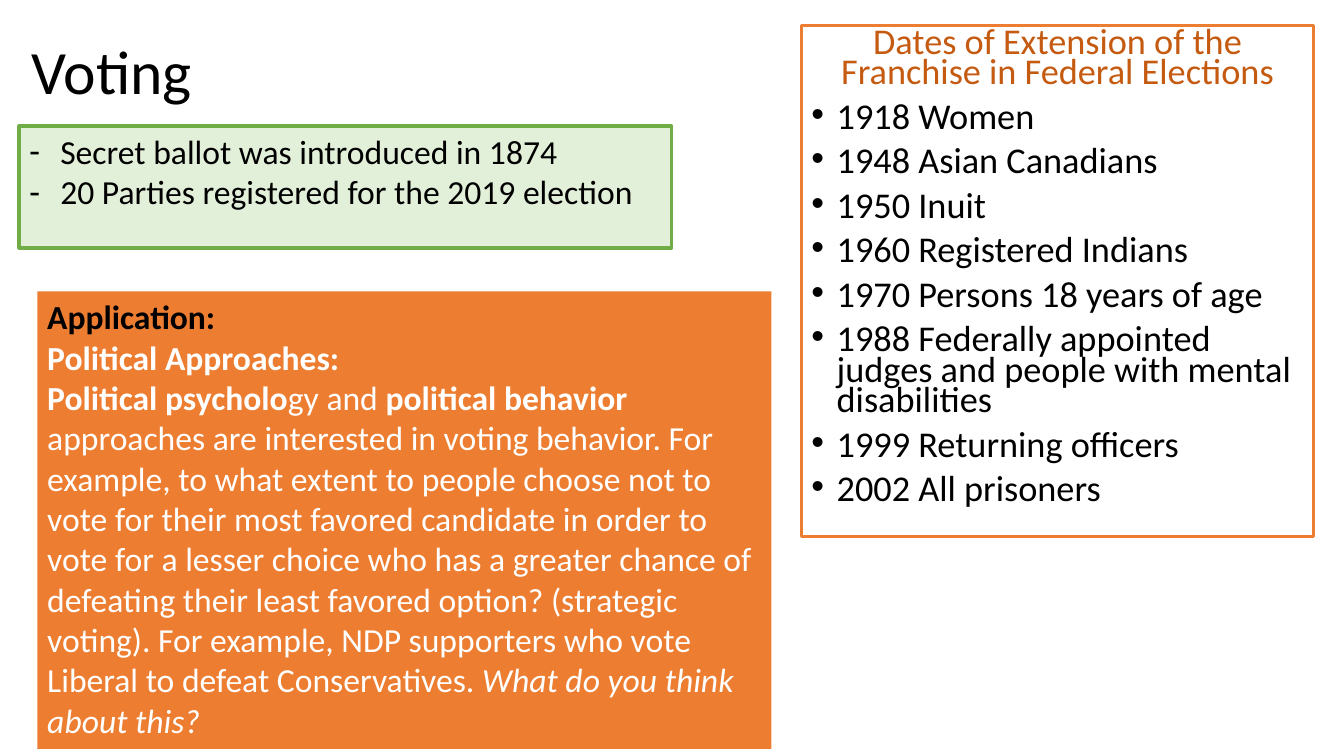
from dataclasses import dataclass

from lxml import etree
from pptx import Presentation
from pptx.dml.color import RGBColor
from pptx.enum.text import MSO_ANCHOR, MSO_AUTO_SIZE, PP_ALIGN
from pptx.oxml.ns import qn
from pptx.util import Inches, Pt

TOP, MIDDLE = MSO_ANCHOR.TOP, MSO_ANCHOR.MIDDLE
LEFT, CENTER = PP_ALIGN.LEFT, PP_ALIGN.CENTER
NO_AUTOFIT = MSO_AUTO_SIZE.NONE


@dataclass(frozen=True)
class Theme:
    font: str = "Calibri"
    black: str = "000000"
    white: str = "FFFFFF"
    orange: str = "ED7D31"
    rust: str = "C55A11"
    green: str = "70AD47"
    pale_green: str = "E2F0D9"
    title_size: float = 44
    body_size: float = 24
    dates_size: float = 25.9


THEME = Theme()

TITLE = "Voting"
DATES_HEADING = "Dates of Extension of the Franchise in Federal Elections"
DATES = [
    "1918 Women",
    "1948 Asian Canadians",
    "1950 Inuit",
    "1960 Registered Indians",
    "1970 Persons 18 years of age",
    "1988 Federally appointed judges and people with mental disabilities",
    "1999 Returning officers",
    "2002 All prisoners",
]
BALLOT_FACTS = [
    "Secret ballot was introduced in 1874",
    "20 Parties registered for the 2019 election",
]
APPLICATION_HEADING = "Application:"
APPROACHES_HEADING = "Political Approaches:"
APPROACHES = [
    ("Political psycholo", {"bold": True}),
    ("gy and ", {}),
    ("political behavior ", {"bold": True}),
    (
        "approaches are interested in voting behavior. For example, to what extent "
        "to people choose not to vote for their most favored candidate in order to "
        "vote for a lesser choice who has a greater chance of defeating their least "
        "favored option? (strategic voting). For example, NDP supporters who vote "
        "Liberal to defeat Conservatives. ",
        {},
    ),
    ("What do you think about this?", {"italic": True}),
]

TITLE_AREA = (0.21, 0.01, 2.52, 1.45)
DATES_AREA = (7.95, 0.25, 5.08, 5.07)
FACTS_AREA = (0.19, 1.25, 6.47, 1.21)
APPLICATION_AREA = (0.37, 2.89, 7.28, 4.54)


def color(code):
    return RGBColor.from_string(code)


def add_text(frame, text, *, size=THEME.body_size, ink=THEME.black, bold=False,
             align=LEFT, bullet=None, indent=0, line_spacing=1.0, space_before=0):
    spans = [(text, {"bold": bold})] if isinstance(text, str) else text
    first = frame.paragraphs[0]
    para = frame.add_paragraph() if first.runs else first
    para.alignment = align
    para.line_spacing = line_spacing
    para.space_before = Pt(space_before)
    if bullet:
        properties = para._p.get_or_add_pPr()
        properties.set("marL", str(Inches(indent)))
        properties.set("indent", str(-Inches(indent)))
        etree.SubElement(properties, qn("a:buFont"), typeface="Arial")
        etree.SubElement(properties, qn("a:buChar"), char=bullet)
    for words, style in spans:
        span = para.add_run()
        span.text = words
        span.font.name = THEME.font
        span.font.size = Pt(size)
        span.font.color.rgb = color(ink)
        span.font.bold = style.get("bold", False)
        span.font.italic = style.get("italic", False)


def prepare_frame(shape, anchor=TOP):
    frame = shape.text_frame
    frame.word_wrap = True
    frame.auto_size = NO_AUTOFIT
    frame.vertical_anchor = anchor
    return frame


def add_box(page, area, *, fill=None, line=None, line_width=0):
    box = page.shapes.add_textbox(*map(Inches, area))
    if fill:
        box.fill.solid()
        box.fill.fore_color.rgb = color(fill)
    if line:
        box.line.color.rgb = color(line)
        box.line.width = Pt(line_width)
    return prepare_frame(box)


def add_title(page):
    title = page.shapes.title
    title.left, title.top, title.width, title.height = map(Inches, TITLE_AREA)
    add_text(prepare_frame(title, MIDDLE), TITLE, size=THEME.title_size, line_spacing=0.9)


def add_dates(page):
    frame = add_box(page, DATES_AREA, line=THEME.orange, line_width=2.25)
    layout = {"size": THEME.dates_size, "line_spacing": 0.7, "space_before": 10}
    add_text(frame, DATES_HEADING, ink=THEME.rust, align=CENTER, **layout)
    for date in DATES:
        add_text(frame, date, bullet="•", indent=0.25, **layout)


def add_facts(page):
    frame = add_box(page, FACTS_AREA, fill=THEME.pale_green, line=THEME.green, line_width=2.5)
    for fact in BALLOT_FACTS:
        add_text(frame, fact, bullet="-", indent=0.31)


def add_application(page):
    frame = add_box(page, APPLICATION_AREA, fill=THEME.orange)
    add_text(frame, APPLICATION_HEADING, bold=True)
    add_text(frame, APPROACHES_HEADING, ink=THEME.white, bold=True)
    add_text(frame, APPROACHES, ink=THEME.white)


def main():
    deck = Presentation()
    deck.slide_width, deck.slide_height = Inches(13.33), Inches(7.5)
    page = deck.slides.add_slide(deck.slide_layouts[5])
    add_title(page)
    add_dates(page)
    add_facts(page)
    add_application(page)
    deck.save("out.pptx")


if __name__ == "__main__":
    main()
